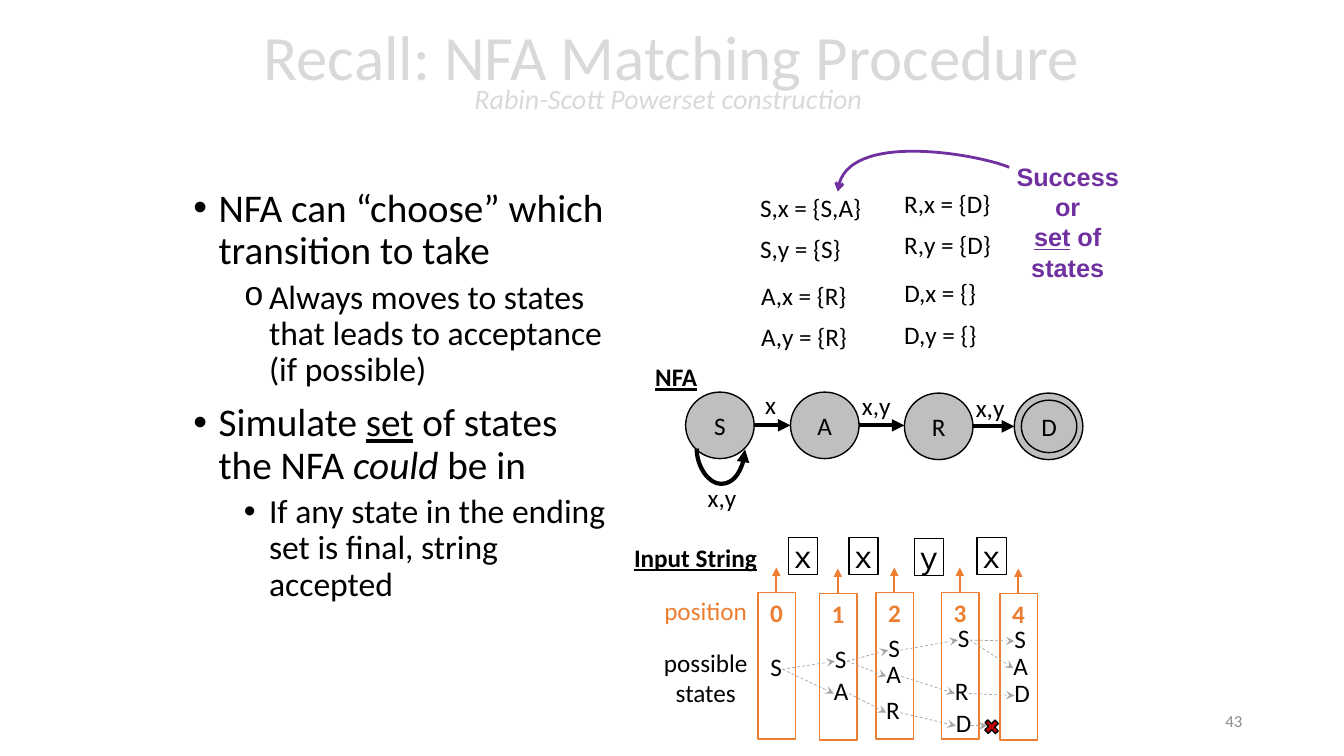
from lxml import etree
from pptx import Presentation, util as u
from pptx.dml.color import RGBColor
from pptx.enum import dml, shapes, text
from pptx.oxml import ns

BLACK, WHITE, GREY, ORANGE = "000000", "FFFFFF", "BFBFBF", "ED7D31"
PURPLE, PALE, ASH, RED, SLATE = "7030A0", "D9D9D9", "A5A5A5", "C00000", "8C8C8C"
MID, LEFT, RIGHT = text.PP_ALIGN.CENTER, text.PP_ALIGN.LEFT, text.PP_ALIGN.RIGHT
FORM = shapes.MSO_SHAPE
RULES = [("S,x = {S,A}", 744, 186, 122), ("S,y = {S}", 744, 227, 101),
         ("A,x = {R}", 745, 273, 106), ("A,y = {R}", 745, 314, 106),
         ("R,x = {D}", 887, 182, 107), ("R,y = {D}", 887, 223, 107),
         ("D,x = {}", 887, 270, 92), ("D,y = {}", 887, 312, 93)]
NODES = [("S", 680, 389), ("A", 784, 389), ("R", 897, 390), ("", 1006, 390)]
EDGES = [("x", 749, 381, 31), ("x,y", 845, 382, 49),
         ("x,y", 958, 384, 49), ("x,y", 692, 474, 49)]
INPUT = [("x", 782, 533), ("x", 842, 533), ("y", 907, 534), ("x", 969, 533)]
SLOTS = [(752, 588), (813, 589), (869, 588), (934, 588), (992, 589)]
WIDTHS = {"S": 12, "A": 15, "R": 14, "D": 16}
STATES = {"S0": (764, 651), "S1": (828, 643), "A1": (827, 675),
          "S2": (881, 632), "A2": (879, 658), "R2": (879, 694),
          "S3": (950, 622), "R3": (947, 675), "D3": (948, 707),
          "S4": (1006, 623), "A4": (1005, 650), "D4": (1006, 677)}
MOVES = ["S0 S1", "S0 A1", "S1 S2", "S1 A2", "A1 R2", "S2 S3", "A2 R3",
         "R2 D3", "S3 S4", "S3 A4", "R3 D4"]
POINTS = [("•", 28, [("NFA can “choose” which transition to take", "")]),
          ("o", 24, [("Always moves to states that leads to acceptance (if possible)", "")]),
          ("•", 28, [("Simulate ", ""), ("set", "u"), (" of states the NFA ", ""),
                     ("could", "i"), (" be in", "")]),
          ("•", 24, [("If any state in the ending set is final, string accepted", "")])]


def px(*nums):
    """Turn lengths in px into EMU."""
    return [u.Emu(n * 9144) for n in nums]


def hue(code):
    """Give the colour for a hex string."""
    return RGBColor.from_string(code)


def add_run(para, words, size, color=BLACK, marks="", font="Calibri"):
    """Add one run; marks holds any of b, i and u."""
    run = para.add_run()
    run.text = words
    face = run.font
    face.name, face.size, face.color.rgb = font, u.Pt(size), hue(color)
    face.bold, face.italic, face.underline = "b" in marks, "i" in marks, "u" in marks


def set_frame(item, inset=None, wrap=False, middle=False):
    """Set wrapping, insets and anchor of a text frame."""
    frame = item.text_frame
    frame.word_wrap = wrap
    frame.vertical_anchor = text.MSO_ANCHOR.MIDDLE if middle else text.MSO_ANCHOR.TOP
    if inset is not None:
        frame.margin_left, frame.margin_right = px(inset, inset)
        frame.margin_top = frame.margin_bottom = 0
    return frame


def add_label(slide, box, lines, size=18, color=BLACK, marks="", align=LEFT,
              inset=None, wrap=False, middle=False):
    """Add a text box with one plain paragraph per line."""
    frame = set_frame(slide.shapes.add_textbox(*px(*box)), inset, wrap, middle)
    for spot, words in enumerate(lines.split("\n")):
        para = frame.add_paragraph() if spot else frame.paragraphs[0]
        para.alignment = align
        if inset == 0:
            para.line_spacing = u.Pt(18)
        add_run(para, words, size, color, marks)
    return frame


def add_form(slide, kind, box, fill, edge=BLACK):
    """Add a filled preset shape with a thin edge."""
    form = slide.shapes.add_shape(kind, *px(*box))
    form.shadow.inherit = False
    form.fill.solid()
    form.fill.fore_color.rgb = hue(fill)
    form.line.color.rgb, form.line.width = hue(edge), u.Pt(1)
    return form


def add_node(slide, name, box):
    """Add a round state with its name."""
    node = add_form(slide, FORM.OVAL, box, GREY)
    para = set_frame(node, 0, middle=True).paragraphs[0]
    para.alignment = MID
    add_run(para, name, 18)


def set_line(line, color, width, head, dash=False):
    """Style a line and put an arrowhead at its end."""
    line.color.rgb, line.width = hue(color), u.Pt(width)
    if dash:
        line.dash_style = dml.MSO_LINE.DASH
    etree.SubElement(line._get_or_add_ln(), ns.qn("a:tailEnd"), type=head)


def add_arrow(slide, ends, color, width, head="triangle", dash=False):
    """Add a straight arrow."""
    arrow = slide.shapes.add_connector(shapes.MSO_CONNECTOR.STRAIGHT, *px(*ends))
    set_line(arrow.line, color, width, head, dash)
    etree.SubElement(arrow._element.spPr, ns.qn("a:effectLst"))


def add_curve(slide, start, knots, color, width, head):
    """Add an open curve; each three knots make one Bezier piece."""
    maker = slide.shapes.build_freeform(*px(*start), scale=1.0)
    maker.add_line_segments([px(*knot) for knot in knots], close=False)
    curve = maker.convert_to_shape()
    curve.shadow.inherit = False
    curve.fill.background()
    set_line(curve.line, color, width, head)
    steps = list(curve._element.iter(ns.qn("a:lnTo")))
    track = steps[0].getparent()
    for spot, step in enumerate(steps):
        if spot % 3 == 0:
            piece = etree.SubElement(track, ns.qn("a:cubicBezTo"))
        piece.append(step[0])
        track.remove(step)


def add_title(slide):
    """Add the title and its subtitle."""
    box = slide.shapes.add_textbox(*px(235, 3, 862, 145))
    para = set_frame(box, wrap=True, middle=True).paragraphs[0]
    para.alignment, para.line_spacing = MID, 0.7
    add_run(para, "Recall: NFA Matching Procedure", 45, PALE)
    para.add_line_break()
    add_run(para, "Rabin-Scott Powerset construction ", 20, PALE, "i")


def add_points(slide):
    """Add the bulleted points."""
    frame = set_frame(slide.shapes.add_textbox(*px(182, 182, 435, 476)), wrap=True)
    for spot, (sign, size, runs) in enumerate(POINTS):
        para = frame.add_paragraph() if spot else frame.paragraphs[0]
        top = size == 28
        para.line_spacing, para.space_before = 0.9, u.Pt(10 if top else 5)
        props = para._p.get_or_add_pPr()
        props.set("marL", str(px(25 if top else 75)[0]))
        props.set("indent", str(px(-25)[0]))
        face = "Courier New" if sign == "o" else "Arial"
        etree.SubElement(props, ns.qn("a:buFont"), typeface=face)
        etree.SubElement(props, ns.qn("a:buChar"), char=sign)
        for words, marks in runs:
            add_run(para, words, size, marks=marks)


def add_graph(slide):
    """Add the automaton with its rules."""
    for words, x, y, w in RULES + EDGES:
        add_label(slide, (x, y, w, 40), words)
    for name, x, y in NODES:
        add_node(slide, name, (x, y, 68, 66))
    add_node(slide, "D", (1013, 397, 55, 52))
    for (_, x, y), (_, end, _) in zip(NODES, NODES[1:]):
        add_arrow(slide, (x + 68, y + 33, end, y + 33), BLACK, 3)
    add_curve(slide, (691, 445), [(691, 463), (703, 480), (715, 480),
                                  (727, 480), (739, 463), (739, 446)], BLACK, 3, "triangle")
    add_label(slide, (640, 354, 62, 40), "NFA", marks="bu")
    frame = add_label(slide, (996, 155, 126, 101), "Successor", 18, PURPLE, "b", MID, wrap=True)
    for runs in ([("set", "bu"), (" of", "b")], [("states", "b")]):
        para = frame.add_paragraph()
        para.alignment = MID
        for words, marks in runs:
            add_run(para, words, 18, PURPLE, marks)
    for para in frame.paragraphs:
        for run in para.runs:
            run.font.name = "Arial"
    add_curve(slide, (1001, 166), [(973, 154), (835, 128), (831, 190)], PURPLE, 2, "arrow")


def add_trace(slide):
    """Add the input string and the states at each position."""
    add_label(slide, (619, 533, 143, 40), "Input String", marks="bu")
    add_label(slide, (649, 586, 103, 40), "position", color=ORANGE)
    add_label(slide, (648, 637, 104, 71), "possible\nstates", align=MID)
    for sign, x, y in INPUT:
        cell = add_form(slide, FORM.RECTANGLE, (x, y, 29, 37), WHITE)
        para = set_frame(cell, 5).paragraphs[0]
        para.alignment = LEFT
        add_run(para, sign, 22, font="Courier New")
    for spot, (x, y) in enumerate(SLOTS):
        add_form(slide, FORM.RECTANGLE, (x, y, 37, 145), WHITE, ORANGE)
        add_arrow(slide, (x + 18, y, x + 18, y - 25), ORANGE, 1.5)
        add_label(slide, (x + 2, y, 33, 40), str(spot), color=ORANGE, marks="b")
    for key, (x, y) in STATES.items():
        add_label(slide, (x, y, WIDTHS[key[0]], 26), key[0], inset=0)
    for move in MOVES:
        start, end = move.split()
        (x, y), (to, low) = STATES[start], STATES[end]
        add_arrow(slide, (x + WIDTHS[start[0]], y + 13, to, low + 13), ASH, 0.5, "stealth", True)
    add_arrow(slide, (963, 720, 979, 720), ASH, 0.5, "stealth", True)
    cross = add_form(slide, FORM.CROSS, (976, 714, 15, 14), RED)
    cross.rotation, cross.adjustments[0] = 46.6, 0.365


def main():
    """Build and save the slide."""
    deck = Presentation()
    deck.slide_width, deck.slide_height = px(1333, 750)
    slide = deck.slides.add_slide(deck.slide_layouts[6])
    add_title(slide)
    add_points(slide)
    add_graph(slide)
    add_trace(slide)
    add_label(slide, (942, 695, 300, 40), "43", 12, SLATE, align=RIGHT, wrap=True, middle=True)
    deck.save("out.pptx")


if __name__ == "__main__":
    main()
